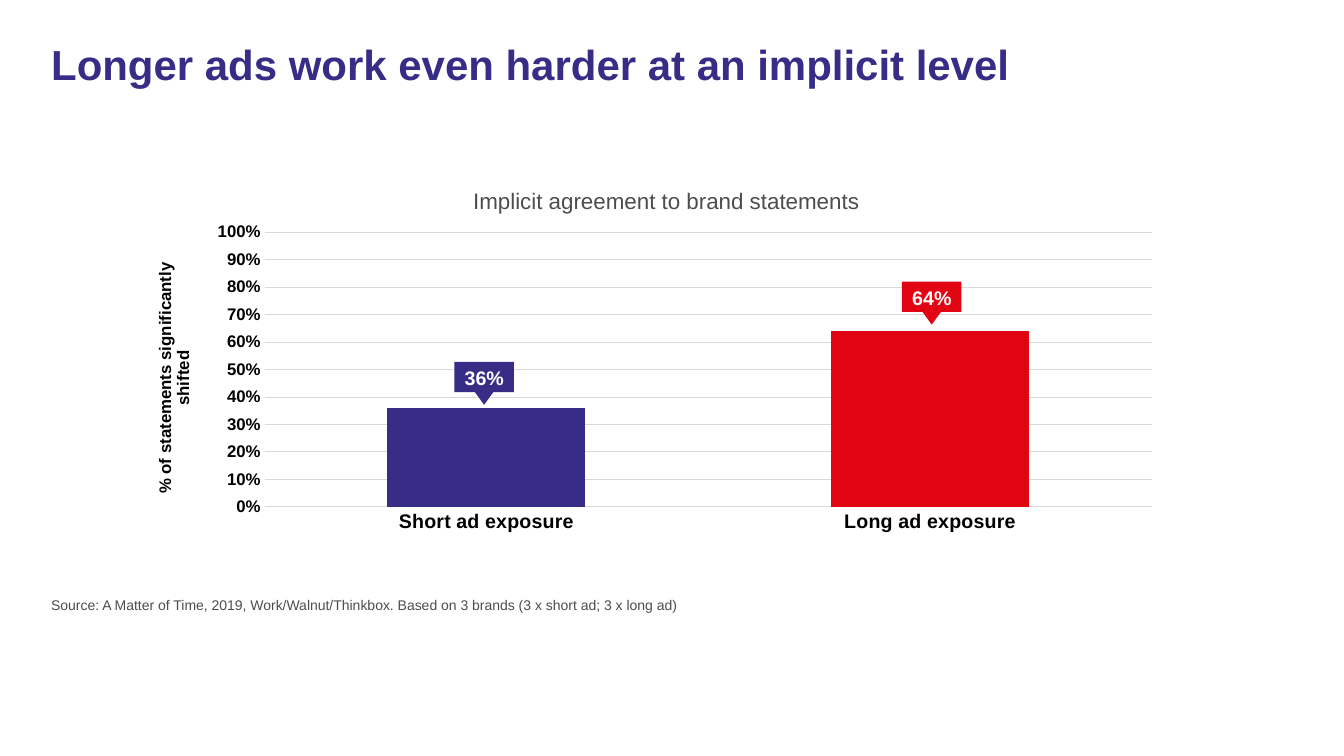
from lxml import etree
from pptx import Presentation
from pptx.chart.data import CategoryChartData
from pptx.dml.color import RGBColor
from pptx.enum.chart import XL_CHART_TYPE, XL_TICK_MARK
from pptx.enum.shapes import MSO_SHAPE
from pptx.enum.text import PP_ALIGN
from pptx.oxml.ns import qn
from pptx.util import Cm, Pt

COLORS = {
    "purple": "372D87",
    "red": "E10514",
    "grey": "4D4D4D",
    "grid": "D9D9D9",
    "black": "000000",
    "white": "FFFFFF",
}


def rgb(name):
    return RGBColor.from_string(COLORS[name])


def add_text(shapes, text, x, y, w, h, size=10, color="grey", bold=False,
             align=PP_ALIGN.LEFT, spacing=None):
    tf = shapes.add_textbox(Cm(x), Cm(y), Cm(w), Cm(h)).text_frame
    tf.word_wrap = True
    p = tf.paragraphs[0]
    p.alignment = align
    p.line_spacing = spacing
    r = p.add_run()
    r.text = text
    r.font.name = "Arial"
    r.font.size = Pt(size)
    r.font.bold = bold
    r.font.color.rgb = rgb(color)


prs = Presentation()
prs.slide_width, prs.slide_height = Cm(33.87), Cm(19.05)
s = prs.slides.add_slide(prs.slide_layouts[6])

# Title and source
add_text(s.shapes, "Longer ads work even harder at an implicit level",
         1.04, 0.99, 31.5, 2.84, size=30, color="purple", bold=True, spacing=0.9)
add_text(s.shapes, "Source: A Matter of Time, 2019, Work/Walnut/Thinkbox. "
         "Based on 3 brands (3 x short ad; 3 x long ad)", 1.04, 14.91, 31.5, 0.84)

# Column chart
data = CategoryChartData(number_format="0%")
data.categories = ["Short ad exposure", "Long ad exposure"]
data.add_series("Series 1", (0.36, 0.64))
chart = s.shapes.add_chart(XL_CHART_TYPE.COLUMN_CLUSTERED, Cm(3.66), Cm(5.46),
                           Cm(25.73), Cm(9.09), data).chart
chart.has_legend = False
chart.has_title = False
chart.font.name = "Arial"
chart.font.size = Pt(10)
chart.font.color.rgb = rgb("black")

plot = chart.plots[0]
plot.gap_width = 124
plot.overlap = -10
plot.vary_by_categories = False
series = plot.series[0]
series.invert_if_negative = False
for fill, color in ((series.format.fill, "purple"),
                    (series.points[1].format.fill, "red")):
    fill.solid()
    fill.fore_color.rgb = rgb(color)

# Axes
cat_axis, val_axis = chart.category_axis, chart.value_axis
for axis, size in ((cat_axis, 14), (val_axis, 12)):
    axis.major_tick_mark = axis.minor_tick_mark = XL_TICK_MARK.NONE
    font = axis.tick_labels.font
    font.name = "Arial"
    font.size = Pt(size)
    font.bold = True
    font.color.rgb = rgb("black")
val_axis.minimum_scale, val_axis.maximum_scale = 0, 1
val_axis.major_unit = 0.1
val_axis.tick_labels.number_format = "0%"
val_axis.tick_labels.number_format_is_linked = False
val_axis.format.line.fill.background()
for line in (cat_axis.format.line, val_axis.major_gridlines.format.line):
    line.color.rgb = rgb("grid")
    line.width = Pt(0.75)

p = val_axis.axis_title.text_frame.paragraphs[0]
r = p.add_run()
r.text = "% of statements significantly shifted"
r.font.name = "Arial"
r.font.size = Pt(12)
r.font.bold = True
r.font.color.rgb = rgb("black")

# Fixed inner plot area
plot_area = chart._chartSpace.chart.plotArea
for old in plot_area.findall(qn("c:layout")):
    plot_area.remove(old)
layout = etree.Element(qn("c:layout"))
manual = etree.SubElement(layout, qn("c:manualLayout"))
for tag, val in (("layoutTarget", "inner"), ("xMode", "edge"), ("yMode", "edge"),
                 ("x", "0.117"), ("y", "0.043"), ("w", "0.869"), ("h", "0.762")):
    etree.SubElement(manual, qn("c:" + tag)).set("val", val)
plot_area.insert(0, layout)

# Chart heading
add_text(s.shapes, "Implicit agreement to brand statements",
         10.21, 4.6, 13.16, 0.94, size=16, align=PP_ALIGN.CENTER)

# Value callouts: label box with a pointer below
for text, color, x, y in (("36%", "purple", 11.2, 9.09),
                          ("64%", "red", 22.48, 7.07)):
    callout = s.shapes.add_group_shape().shapes
    for kind, dx, dy, w, h, turn in (
            (MSO_SHAPE.RECTANGLE, 0.25, 0.03, 1.5, 0.76, 0),
            (MSO_SHAPE.ISOSCELES_TRIANGLE, 0.76, 0.78, 0.48, 0.33, 180)):
        sp = callout.add_shape(kind, Cm(x + dx), Cm(y + dy), Cm(w), Cm(h))
        sp.rotation = turn
        sp.shadow.inherit = False
        sp.fill.solid()
        sp.fill.fore_color.rgb = rgb(color)
        sp.line.fill.background()
    add_text(callout, text, x, y, 2.01, 0.86, size=14, color="white", bold=True,
             align=PP_ALIGN.CENTER)

prs.save("out.pptx")
